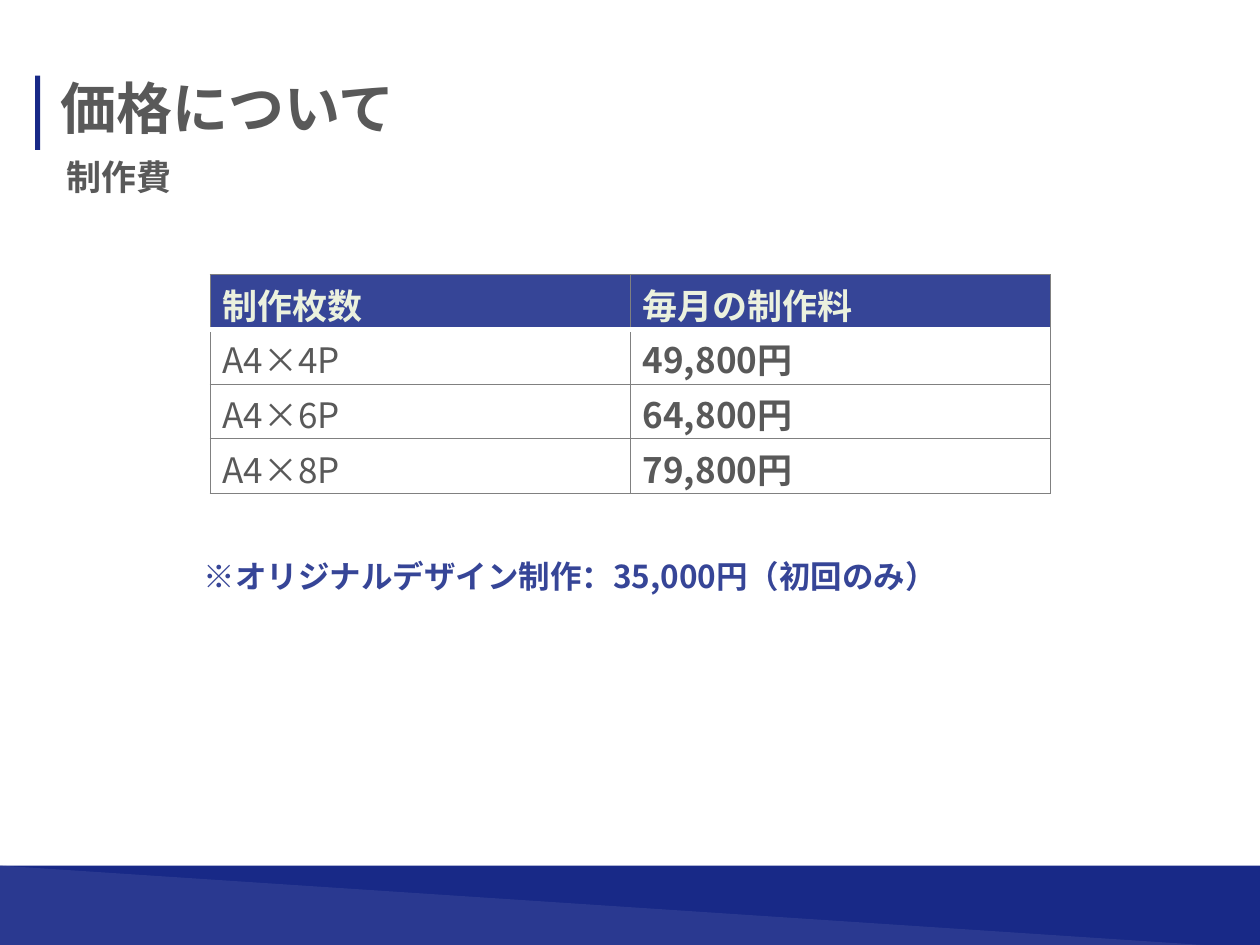
"""Build a price slide with a title, a fee table and a note."""
import pptx
import pptx.dml.color
import pptx.enum.shapes
import pptx.enum.text
import pptx.oxml
import pptx.oxml.ns
import pptx.util
from lxml import etree

RGB = pptx.dml.color.RGBColor
NAVY = RGB(0x18, 0x29, 0x87)
BLUE = RGB(0x36, 0x45, 0x97)
GRAY = RGB(0x59, 0x59, 0x59)
RULE = RGB(0x80, 0x80, 0x80)
PALE = RGB(0xEB, 0xF1, 0xDE)
WHITE = RGB(0xFF, 0xFF, 0xFF)
FONT = "Noto Sans CJK JP"
SHAPE = pptx.enum.shapes.MSO_SHAPE
ALIGN = pptx.enum.text.PP_ALIGN
qn = pptx.oxml.ns.qn


def write(frame, text, size=20, color=GRAY, bold=True, align=ALIGN.LEFT):
    para = frame.paragraphs[0]
    para.alignment = align
    run = para.add_run()
    run.text = text
    font = run.font
    font.name, font.size, font.bold = FONT, pptx.util.Pt(size), bold
    font.color.rgb = color
    etree.SubElement(font._element, qn("a:ea"), typeface=FONT)


class Page:
    def __init__(self, deck, wide=10, high=7.5):
        deck.slide_width = pptx.util.Inches(wide)
        deck.slide_height = pptx.util.Inches(high)
        self.wide, self.high = deck.slide_width, deck.slide_height
        self.slide = deck.slides.add_slide(deck.slide_layouts[5])
        self.shapes = self.slide.shapes

    def place(self, left, top, wide, high):
        """Turn percent shares of the slide into lengths."""
        return (int(self.wide * left / 100), int(self.high * top / 100),
                int(self.wide * wide / 100), int(self.high * high / 100))

    def block(self, box, color, kind=SHAPE.RECTANGLE, alpha=None):
        shape = self.shapes.add_shape(kind, *self.place(*box))
        shape.shadow.inherit = False
        shape.fill.solid()
        shape.fill.fore_color.rgb = color
        shape.line.fill.background()
        if alpha is not None:
            tint = shape._element.spPr.find(".//" + qn("a:srgbClr"))
            etree.SubElement(tint, qn("a:alpha"), val=str(alpha * 1000))
        return shape

    def label(self, box, text, shape=None, **style):
        place = self.place(*box)
        if shape is None:
            shape = self.shapes.add_textbox(*place)
        else:
            shape.left, shape.top, shape.width, shape.height = place
        frame = shape.text_frame
        frame.word_wrap = True
        frame.auto_size = pptx.enum.text.MSO_AUTO_SIZE.NONE
        frame.vertical_anchor = pptx.enum.text.MSO_ANCHOR.TOP
        frame.margin_top = frame.margin_bottom = 0
        write(frame, text, **style)

    def edge(self, cell, side, color, width):
        line = etree.Element(qn("a:ln" + side), w=str(pptx.util.Pt(width)))
        fill = etree.SubElement(line, qn("a:solidFill"))
        etree.SubElement(fill, qn("a:srgbClr"), val=str(color))
        props = cell._tc.get_or_add_tcPr()
        props.insert("LRTB".index(side), line)

    def table(self, box, rows):
        place = self.place(*box)
        grid = self.shapes.add_table(len(rows), len(rows[0]), *place).table
        for r, row in enumerate(rows):
            for c, text in enumerate(row):
                cell = grid.cell(r, c)
                cell.margin_top, cell.margin_bottom = pptx.util.Inches(0.03), 0
                cell.fill.solid()
                cell.fill.fore_color.rgb = WHITE if r else BLUE
                write(cell.text_frame, text, color=GRAY if r else PALE,
                      bold=r == 0 or c == 1)
                for side in "LRTB":
                    split = (r, side) in ((0, "B"), (1, "T"))
                    pen = (WHITE, 3) if split else (RULE, 0.5)
                    self.edge(cell, side, *pen)


def main():
    deck = pptx.Presentation()
    page = Page(deck)
    band = (0, 91.6, 100, 8.8)
    page.block((2.8, 8, 0.4, 7.87), NAVY)
    page.block(band, NAVY)
    slope = page.block(band, BLUE, SHAPE.ISOSCELES_TRIANGLE, alpha=60)
    slope.adjustments[0] = 0
    page.table((16.67, 29.07, 66.67, 23.07), [
        ("制作枚数", "毎月の制作料"),
        ("A4×4P", "49,800円"),
        ("A4×6P", "64,800円"),
        ("A4×8P", "79,800円"),
    ])
    page.label((12.2, 58.93, 66.7, 5.4),
               "※オリジナルデザイン制作：35,000円（初回のみ） ",
               size=18, color=BLUE, align=ALIGN.CENTER)
    page.label((4.3, 16.5, 13.3, 5.9), "制作費")
    page.label((3.8, 7.8, 68.3, 8.5), "価格について",
               shape=page.shapes.title, size=32)
    deck.save("out.pptx")


if __name__ == "__main__":
    main()
